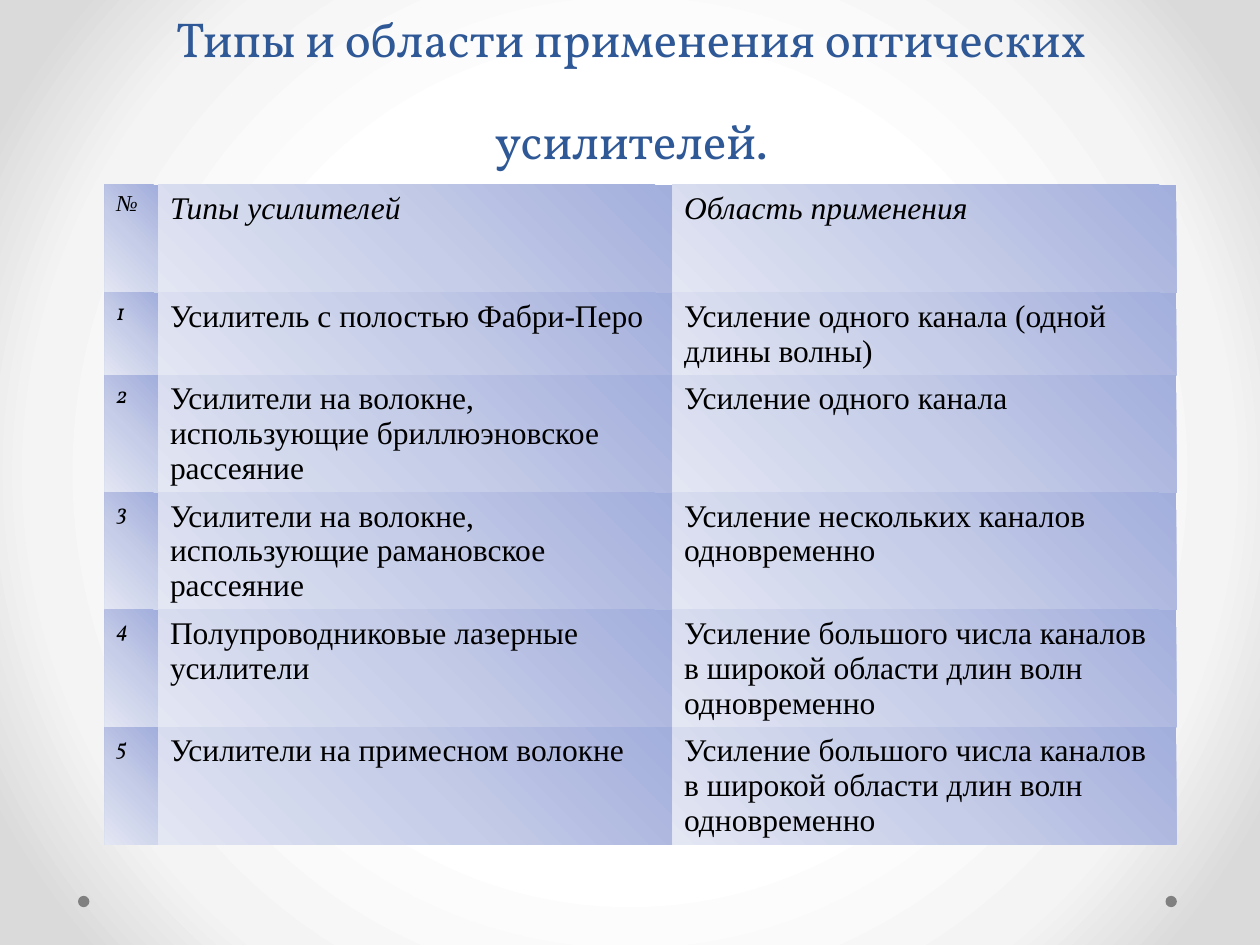
from dataclasses import dataclass

from lxml import etree
from pptx import Presentation
from pptx.dml.color import RGBColor
from pptx.enum import shapes, text
from pptx.oxml import ns
from pptx.util import Pt


@dataclass(frozen=True)
class Theme:
    title_font: str = "Vollkorn"
    body_font: str = "Times New Roman"
    title_size: int = 28
    title_leading: int = 58
    body_size: int = 18
    number_size: int = 13
    title_color: str = "2F5897"
    body_color: str = "000000"
    dot_color: str = "808080"
    page_stops: tuple = ((50, "FFFFFF"), (76, "F4F4F4"), (92, "DADADA"))
    cell_stops: tuple = ((0, "A2AEDC"), (50, "C6CDE8"), (100, "E3E6F3"))


THEME = Theme()
PLAIN_TABLE_STYLE = "{2D5ABB26-0587-4C30-8999-92F81FD0307C}"
TITLE = "Типы и области применения оптических усилителей."
ROWS = [
    ("№", "Типы усилителей", "Область применения"),
    ("1", "Усилитель с полостью Фабри-Перо",
     "Усиление одного канала (одной длины волны)"),
    ("2", "Усилители на волокне, использующие бриллюэновское рассеяние",
     "Усиление одного канала"),
    ("3", "Усилители на волокне, использующие рамановское рассеяние",
     "Усиление нескольких каналов одновременно"),
    ("4", "Полупроводниковые лазерные усилители",
     "Усиление большого числа каналов в широкой области длин волн одновременно"),
    ("5", "Усилители на примесном волокне",
     "Усиление большого числа каналов в широкой области длин волн одновременно"),
]
COLUMN_WIDTHS = (30.6, 293.8, 288)
ROW_HEIGHTS = (61.9, 33.8, 61.9, 47.5, 61.9, 61.9)


def set_gradient(properties, stops, angle=None):
    """Replace the solid fill: linear at an angle in degrees, else circular."""
    gradient = etree.Element(ns.qn("a:gradFill"), rotWithShape="1")
    stop_list = etree.SubElement(gradient, ns.qn("a:gsLst"))
    for position, color in stops:
        stop = etree.SubElement(stop_list, ns.qn("a:gs"), pos=str(position * 1000))
        etree.SubElement(stop, ns.qn("a:srgbClr"), val=color)
    if angle is None:
        circle = etree.SubElement(gradient, ns.qn("a:path"), path="circle")
        etree.SubElement(circle, ns.qn("a:fillToRect"),
                         {side: "50000" for side in "ltrb"})
    else:
        etree.SubElement(gradient, ns.qn("a:lin"), ang=str(angle * 60000), scaled="0")
    properties.replace(properties.find(ns.qn("a:solidFill")), gradient)


def format_run(run, font, size, color, italic=False):
    run.font.name = font
    run.font.size = Pt(size)
    run.font.bold = False
    run.font.italic = italic
    run.font.color.rgb = RGBColor.from_string(color)


def add_backdrop(page, width):
    page.background.fill.solid()
    set_gradient(page.background._cSld.bg.bgPr, THEME.page_stops)
    size, margin, top = 6.5, 44.6, 511.9
    for left in (margin, width - margin - size - 2.9):
        dot = page.shapes.add_shape(shapes.MSO_SHAPE.OVAL, Pt(left), Pt(top),
                                    Pt(size), Pt(size))
        dot.shadow.inherit = False
        dot.fill.solid()
        dot.fill.fore_color.rgb = RGBColor.from_string(THEME.dot_color)
        dot.line.fill.background()


def place_title(page, left, top, width, height):
    title = page.shapes.title
    title.left, title.top = Pt(left), Pt(top)
    title.width, title.height = Pt(width), Pt(height)
    frame = title.text_frame
    frame.text = TITLE
    frame.word_wrap = True
    frame.auto_size = text.MSO_AUTO_SIZE.NONE
    frame.vertical_anchor = text.MSO_ANCHOR.BOTTOM
    para = frame.paragraphs[0]
    para.alignment = text.PP_ALIGN.CENTER
    para.line_spacing = Pt(THEME.title_leading)
    format_run(para.runs[0], THEME.title_font, THEME.title_size, THEME.title_color)


def fill_cell(cell, content, row, column):
    cell.fill.solid()
    set_gradient(cell._tc.tcPr, THEME.cell_stops, angle=135)
    cell.margin_left = cell.margin_right = Pt(6.75)
    cell.margin_top = cell.margin_bottom = Pt(3.6)
    cell.text = content
    header, number = row == 0, column == 0
    format_run(
        cell.text_frame.paragraphs[0].runs[0],
        THEME.title_font if number and not header else THEME.body_font,
        THEME.number_size if number else THEME.body_size,
        THEME.body_color,
        italic=header or number,
    )


def add_amplifier_table(page, left, top):
    frame = page.shapes.add_table(
        len(ROWS), len(COLUMN_WIDTHS), Pt(left), Pt(top),
        Pt(sum(COLUMN_WIDTHS)), Pt(sum(ROW_HEIGHTS)))
    table = frame.table
    table.first_row = table.horz_banding = False
    table._tbl.tblPr.find(ns.qn("a:tableStyleId")).text = PLAIN_TABLE_STYLE
    for column, width in zip(table.columns, COLUMN_WIDTHS):
        column.width = Pt(width)
    for row, height in zip(table.rows, ROW_HEIGHTS):
        row.height = Pt(height)
    for row, contents in enumerate(ROWS):
        for column, content in enumerate(contents):
            fill_cell(table.cell(row, column), content, row, column)


def main():
    deck = Presentation()
    width, height = 720, 540
    deck.slide_width, deck.slide_height = Pt(width), Pt(height)
    page = deck.slides.add_slide(deck.slide_layouts[5])
    add_backdrop(page, width)
    place_title(page, 36.7, 9.4, 648, 90.7)
    add_amplifier_table(page, 59.8, 105.5)
    deck.save("out.pptx")


if __name__ == "__main__":
    main()
